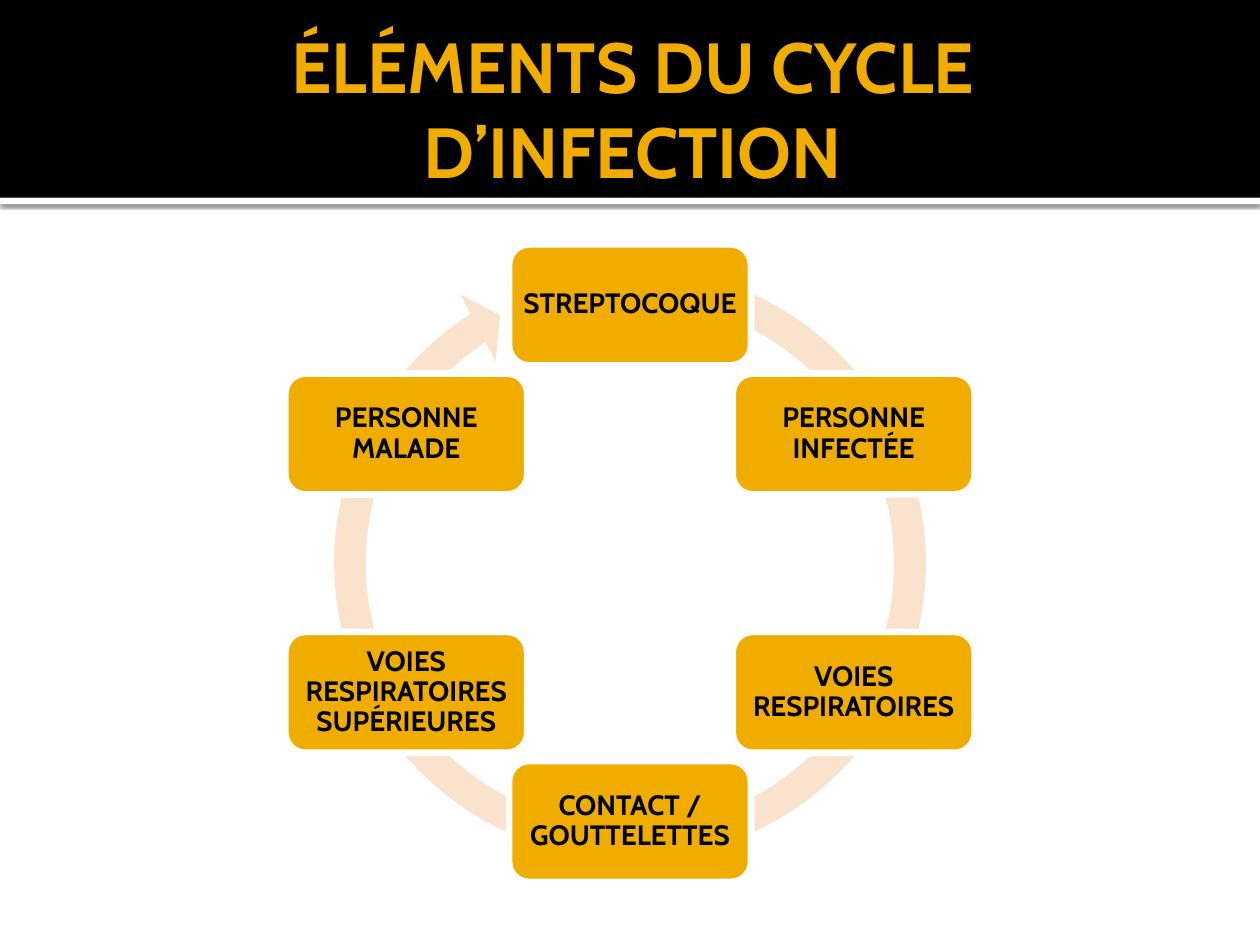
from math import cos, radians, sin

from lxml.etree import SubElement
from pptx import Presentation
from pptx.dml.color import RGBColor
from pptx.enum.shapes import MSO_SHAPE
from pptx.enum.text import MSO_ANCHOR, PP_ALIGN
from pptx.oxml.ns import qn
from pptx.util import Inches, Pt

WIDE, HIGH = 10, 7.5
MID_X, MID_Y, RADIUS = WIDE / 2, 4.47, 2.05
BOX_W, BOX_H = 1.92, 0.96
GOLD, PEACH, BLACK, WHITE = "F0AD00", "F9E3CC", "000000", "FFFFFF"
STEPS = [
    "STREPTOCOQUE",
    "PERSONNE INFECTÉE",
    "VOIES RESPIRATOIRES",
    "CONTACT / GOUTTELETTES",
    "VOIES RESPIRATOIRES SUPÉRIEURES",
    "PERSONNE MALADE",
]


def color(code):
    return RGBColor.from_string(code)


def add_form(slide, kind, left, top, width, height, fill):
    form = slide.shapes.add_shape(
        kind, Inches(left), Inches(top), Inches(width), Inches(height))
    form.shadow.inherit = False
    form.fill.solid()
    form.fill.fore_color.rgb = color(fill)
    form.line.fill.background()
    return form


def cast_shade(form):
    effects = form._element.spPr.find(qn("a:effectLst"))
    shade = SubElement(effects, qn("a:outerShdw"), blurRad=str(Pt(2.5)),
                       dist=str(Pt(0.8)), dir="5400000", algn="t", rotWithShape="0")
    tint = SubElement(shade, qn("a:srgbClr"), val=BLACK)
    SubElement(tint, qn("a:alpha"), val="60000")


def write(form, text, size, ink, pads, space=None):
    frame = form.text_frame
    frame.word_wrap = True
    frame.vertical_anchor = MSO_ANCHOR.MIDDLE
    (frame.margin_left, frame.margin_top,
     frame.margin_right, frame.margin_bottom) = map(Inches, pads)
    para = frame.paragraphs[0]
    para.text = text
    para.alignment = PP_ALIGN.CENTER
    para.line_spacing = space
    para.font.name = "Cabin"
    para.font.size = Pt(size)
    para.font.bold = True
    para.font.color.rgb = color(ink)


def add_header(slide):
    depth = 1.57
    strip = add_form(slide, MSO_SHAPE.RECTANGLE, 0, depth, WIDE, 0.05, WHITE)
    cast_shade(strip)
    add_form(slide, MSO_SHAPE.RECTANGLE, 0, 0, WIDE, depth, BLACK)
    title = slide.shapes.add_textbox(
        Inches(0.05 * WIDE), Inches(0.17), Inches(0.9 * WIDE), Inches(1.37))
    write(title, "ÉLÉMENTS DU CYCLE D’INFECTION", 40.5, GOLD,
          (0.1, 0.05, 0.05, 0.05))


def add_ring(slide):
    side = 5.05
    ring = add_form(slide, MSO_SHAPE.CIRCULAR_ARROW, MID_X - side / 2,
                    MID_Y - side / 2, side, side, PEACH)
    for spot, value in enumerate((0.05, 3.13, 142.27, 171.28, 0.06)):
        ring.adjustments[spot] = value


def add_step(slide, text, angle):
    left = MID_X + RADIUS * sin(angle) - BOX_W / 2
    top = MID_Y - RADIUS * cos(angle) - BOX_H / 2
    box = add_form(slide, MSO_SHAPE.ROUNDED_RECTANGLE,
                   left, top, BOX_W, BOX_H, GOLD)
    box.line.color.rgb = color(WHITE)
    box.line.width = Pt(3.78)
    write(box, text, 16, BLACK, (0.03, 0.07, 0.03, 0.07), 0.9)


def main():
    deck = Presentation()
    deck.slide_width, deck.slide_height = Inches(WIDE), Inches(HIGH)
    slide = deck.slides.add_slide(deck.slide_layouts[6])
    add_header(slide)
    add_ring(slide)
    for turn, text in enumerate(STEPS):
        add_step(slide, text, radians(turn * 360 / len(STEPS)))
    deck.save("out.pptx")


if __name__ == "__main__":
    main()
